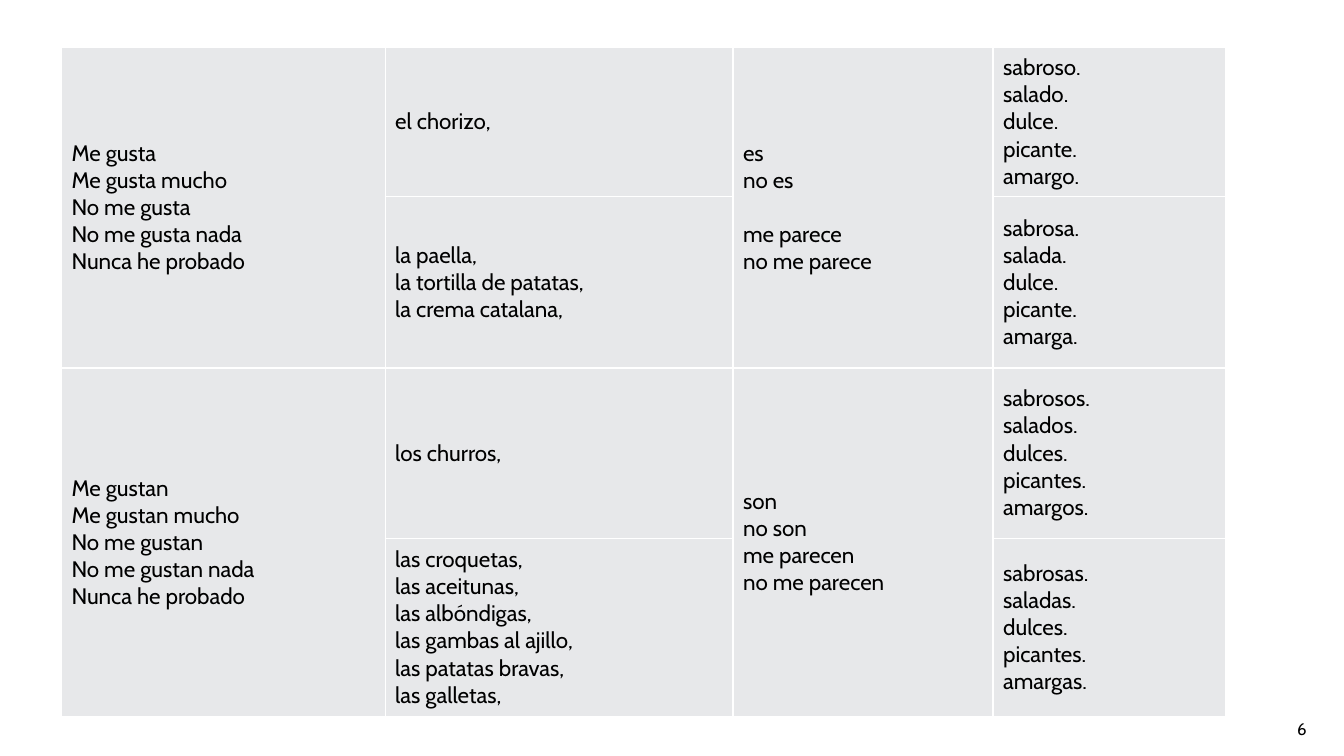
from dataclasses import dataclass

from lxml import etree
from pptx import Presentation
from pptx.dml.color import RGBColor
from pptx.enum import text as t
from pptx.oxml import ns
from pptx.util import Inches, Pt


@dataclass(frozen=True)
class Theme:
    font: str = "Cabin"
    ink: str = "000000"
    fill: str = "E7E8EA"
    rule: str = "FFFFFF"
    body: int = 16
    small: int = 12
    gap: float = 19.4


@dataclass(frozen=True)
class Entry:
    row: int
    col: int
    lines: tuple[str, ...]
    span: int = 1
    split: int = 0  # index of the line that follows a gap


THEME = Theme()
COLS = (3.21, 3.45, 2.58, 2.31)
ROWS = (1.48, 1.7, 1.69, 1.77)


def tastes(end: str, plural: str = "") -> tuple[str, ...]:
    """Inflect the five adjectives for gender and number."""
    stems = ("sabros" + end, "salad" + end, "dulce", "picante", "amarg" + end)
    return tuple(f"{stem}{plural}." for stem in stems)


def likes(verb: str) -> tuple[str, ...]:
    return (f"Me {verb}", f"Me {verb} mucho", f"No me {verb}",
            f"No me {verb} nada", "Nunca he probado")


ENTRIES = (
    Entry(0, 0, likes("gusta"), span=2),
    Entry(0, 1, ("el chorizo,",)),
    Entry(0, 2, ("es", "no es", "me parece", "no me parece"), span=2, split=2),
    Entry(0, 3, tastes("o")),
    Entry(1, 1, ("la paella,", "la tortilla de patatas,", "la crema catalana,")),
    Entry(1, 3, tastes("a")),
    Entry(2, 0, likes("gustan"), span=2),
    Entry(2, 1, ("los churros,",)),
    Entry(2, 2, ("son", "no son", "me parecen", "no me parecen"), span=2),
    Entry(2, 3, tastes("o", "s")),
    Entry(3, 1, ("las croquetas,", "las aceitunas,", "las albóndigas,",
                 "las gambas al ajillo,", "las patatas bravas,", "las galletas,")),
    Entry(3, 3, tastes("a", "s")),
)


def write(frame, lines: tuple[str, ...], size: int) -> None:
    frame.text = "\n".join(lines)
    for para in frame.paragraphs:
        for run in para.runs:
            run.font.name = THEME.font
            run.font.size = Pt(size)
            run.font.color.rgb = RGBColor.from_string(THEME.ink)


def style(cell) -> None:
    """Give a cell thin rules on all sides and a plain fill."""
    props = cell._tc.get_or_add_tcPr()
    for side in ("lnL", "lnR", "lnT", "lnB"):
        line = etree.SubElement(props, ns.qn(f"a:{side}"), w=str(Pt(1)))
        solid = etree.SubElement(line, ns.qn("a:solidFill"))
        etree.SubElement(solid, ns.qn("a:srgbClr"), val=THEME.rule)
    cell.fill.solid()
    cell.fill.fore_color.rgb = RGBColor.from_string(THEME.fill)
    cell.vertical_anchor = t.MSO_ANCHOR.MIDDLE


def add_grid(slide) -> None:
    grid = slide.shapes.add_table(
        len(ROWS), len(COLS), Inches(0.61), Inches(0.47),
        Inches(sum(COLS)), Inches(sum(ROWS))).table
    grid.first_row = grid.horz_banding = False
    for col, width in zip(grid.columns, COLS):
        col.width = Inches(width)
    for row, height in zip(grid.rows, ROWS):
        row.height = Inches(height)
    for cell in grid.iter_cells():
        style(cell)
    for entry in ENTRIES:
        cell = grid.cell(entry.row, entry.col)
        if entry.span > 1:
            cell.merge(grid.cell(entry.row + entry.span - 1, entry.col))
        write(cell.text_frame, entry.lines, THEME.body)
        if entry.split:
            cell.text_frame.paragraphs[entry.split].space_before = Pt(THEME.gap)


def add_number(slide) -> None:
    box = slide.shapes.add_textbox(
        Inches(12.17), Inches(7.13), Inches(0.79), Inches(0.2))
    frame = box.text_frame
    frame.word_wrap = True
    frame.margin_left = frame.margin_right = 0
    frame.margin_top = frame.margin_bottom = 0
    write(frame, ("6",), THEME.small)
    frame.paragraphs[0].alignment = t.PP_ALIGN.RIGHT


def main() -> None:
    deck = Presentation()
    deck.slide_width, deck.slide_height = Inches(13.33), Inches(7.5)
    slide = deck.slides.add_slide(deck.slide_layouts[6])
    add_grid(slide)
    add_number(slide)
    deck.save("out.pptx")


if __name__ == "__main__":
    main()
